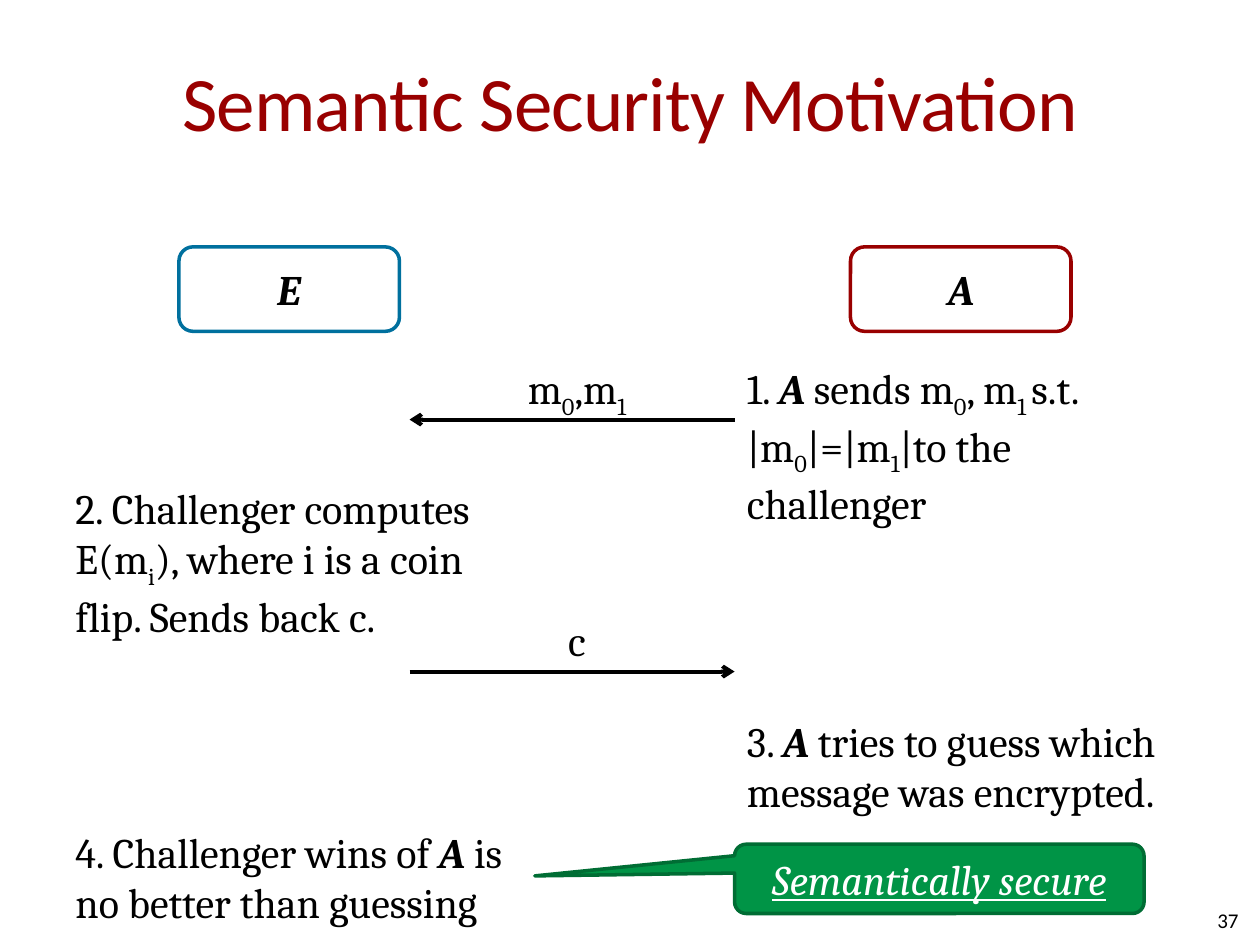
from dataclasses import dataclass

from pptx import Presentation
from pptx.dml.color import RGBColor
from pptx.enum.shapes import MSO_CONNECTOR, MSO_SHAPE
from pptx.enum.text import MSO_ANCHOR, PP_ALIGN
from pptx.oxml.ns import qn
from pptx.shapes.autoshape import Shape
from pptx.slide import Slide
from pptx.util import Inches, Pt
from lxml.etree import SubElement


@dataclass(frozen=True)
class Theme:
    heading_font: str = "Calibri"
    body_font: str = "Cambria"
    title_size: int = 44
    body_size: int = 24
    number_size: int = 12
    black: str = "000000"
    white: str = "FFFFFF"
    red: str = "990000"
    blue: str = "00709E"
    green: str = "009446"
    dark_green: str = "006D34"
    outline: float = 2
    arrow: float = 2.25


@dataclass(frozen=True)
class Frame:
    left: float
    top: float
    width: float
    height: float

    def lengths(self) -> list[int]:
        return [Inches(v) for v in (self.left, self.top, self.width, self.height)]


@dataclass(frozen=True)
class Span:
    text: str
    bold: bool = False
    italic: bool = False
    underline: bool = False
    subscript: bool = False
    break_before: bool = False


@dataclass(frozen=True)
class Block:
    frame: Frame
    spans: list[Span]


@dataclass(frozen=True)
class Panel:
    frame: Frame
    span: Span
    fill: str
    line: str
    ink: str = Theme.black
    kind: MSO_SHAPE = MSO_SHAPE.ROUNDED_RECTANGLE
    adjustments: tuple[float, ...] = ()


@dataclass(frozen=True)
class Message:
    start: float
    end: float
    y: float
    spans: list[Span]


THEME = Theme()
LEFT_COLUMN, RIGHT_COLUMN = 0.5, 5.83
LEFT_WIDTH, RIGHT_WIDTH = 3.83, 3.67
ARROW_LEFT, ARROW_RIGHT = 3.25, 5.83
LABEL_LEFT, LABEL_SIZE, LABEL_RISE = 4.08, 1, 0.5


def sub(text: str) -> Span:
    return Span(text, subscript=True)


ADVERSARY = Span("A", bold=True, italic=True)
CHALLENGER = Span("E", bold=True, italic=True)

STEPS = [
    Block(Frame(RIGHT_COLUMN, 2.83, RIGHT_WIDTH, 1.5), [
        Span("1. "), ADVERSARY, Span(" sends m"), sub("0"), Span(", m"), sub("1 "),
        Span("s.t. "), Span("|m", break_before=True), sub("0"), Span("|=|m"), sub("1"),
        Span("|to the challenger")]),
    Block(Frame(LEFT_COLUMN, 3.78, LEFT_WIDTH, 1.4), [
        Span("2. Challenger computes E(m"), sub("i"),
        Span("), where i is a coin flip. Sends back c.")]),
    Block(Frame(RIGHT_COLUMN, 5.63, RIGHT_WIDTH, 0.9), [
        Span("3. "), ADVERSARY, Span(" tries to guess which message was encrypted.")]),
    Block(Frame(LEFT_COLUMN, 6.51, LEFT_WIDTH, 0.9), [
        Span("4. Challenger wins of "), ADVERSARY,
        Span(" is no better than guessing")]),
]

PANELS = [
    Panel(Frame(1.42, 1.96, 1.75, 0.67), CHALLENGER, THEME.white, THEME.blue),
    Panel(Frame(6.75, 1.96, 1.75, 0.67), ADVERSARY, THEME.white, THEME.red),
    Panel(Frame(5.83, 6.7, 3.25, 0.55),
          Span("Semantically secure", italic=True, underline=True),
          THEME.green, THEME.dark_green, THEME.white,
          MSO_SHAPE.ROUNDED_RECTANGULAR_CALLOUT, (-0.988, -0.042, 0.167)),
]

MESSAGES = [
    Message(ARROW_RIGHT, ARROW_LEFT, 3.33, [Span("m"), sub("0"), Span(",m"), sub("1")]),
    Message(ARROW_LEFT, ARROW_RIGHT, 5.33, [Span("c")]),
]


def write(box: Shape, spans: list[Span], align: PP_ALIGN = PP_ALIGN.LEFT,
          anchor: MSO_ANCHOR = MSO_ANCHOR.TOP, wrap: bool = True, inset: bool = True,
          font: str = THEME.body_font, size: int = THEME.body_size,
          color: str = THEME.black, tracking: int = 0) -> None:
    """Fill a box with one paragraph; tracking is in hundredths of a point."""
    frame = box.text_frame
    frame.word_wrap = wrap
    frame.vertical_anchor = anchor
    if not inset:
        for side in ("left", "top", "right", "bottom"):
            setattr(frame, f"margin_{side}", 0)
    para = frame.paragraphs[0]
    para.alignment = align
    for span in spans:
        if span.break_before:
            para.add_line_break()
        run = para.add_run()
        run.text = span.text
        formats = {"name": font, "size": Pt(size), "bold": span.bold,
                   "italic": span.italic, "underline": span.underline}
        for key, value in formats.items():
            setattr(run.font, key, value)
        run.font.color.rgb = RGBColor.from_string(color)
        properties = run._r.get_or_add_rPr()
        if span.subscript:
            properties.set("baseline", "-25000")
        if tracking:
            properties.set("spc", str(tracking))


def add_text(page: Slide, block: Block, **formats) -> None:
    write(page.shapes.add_textbox(*block.frame.lengths()), block.spans, **formats)


def add_panel(page: Slide, panel: Panel) -> None:
    box = page.shapes.add_shape(panel.kind, *panel.frame.lengths())
    box.shadow.inherit = False
    for index, value in enumerate(panel.adjustments):
        box.adjustments[index] = value
    box.fill.solid()
    box.fill.fore_color.rgb = RGBColor.from_string(panel.fill)
    box.line.color.rgb = RGBColor.from_string(panel.line)
    box.line.width = Pt(THEME.outline)
    write(box, [panel.span], PP_ALIGN.CENTER, MSO_ANCHOR.MIDDLE, inset=False,
          color=panel.ink)


def add_message(page: Slide, message: Message) -> None:
    """Draw an arrow with its label above."""
    y = Inches(message.y)
    arrow = page.shapes.add_connector(
        MSO_CONNECTOR.STRAIGHT, Inches(message.start), y, Inches(message.end), y)
    arrow.line.color.rgb = RGBColor.from_string(THEME.black)
    arrow.line.width = Pt(THEME.arrow)
    SubElement(arrow.line._get_or_add_ln(), qn("a:tailEnd"), type="arrow")
    SubElement(arrow._element.spPr, qn("a:effectLst"))
    label = Frame(LABEL_LEFT, message.y - LABEL_RISE, LABEL_SIZE, LABEL_SIZE)
    add_text(page, Block(label, message.spans), align=PP_ALIGN.CENTER, wrap=False)


def main() -> None:
    deck = Presentation()
    deck.slide_width, deck.slide_height = Inches(10), Inches(7.5)
    page = deck.slides.add_slide(deck.slide_layouts[6])
    add_text(page, Block(Frame(0.5, 0.17, 9, 1.25), [Span("Semantic Security Motivation")]),
             align=PP_ALIGN.CENTER, anchor=MSO_ANCHOR.MIDDLE, font=THEME.heading_font,
             size=THEME.title_size, color=THEME.red, tracking=-50)
    for step in STEPS:
        add_text(page, step)
    add_text(page, Block(Frame(7.5, 7.1, 2.33, 0.4), [Span("37")]),
             align=PP_ALIGN.RIGHT, anchor=MSO_ANCHOR.MIDDLE, inset=False,
             font=THEME.heading_font, size=THEME.number_size)
    for panel in PANELS:
        add_panel(page, panel)
    for message in MESSAGES:
        add_message(page, message)
    deck.save("out.pptx")


if __name__ == "__main__":
    main()
